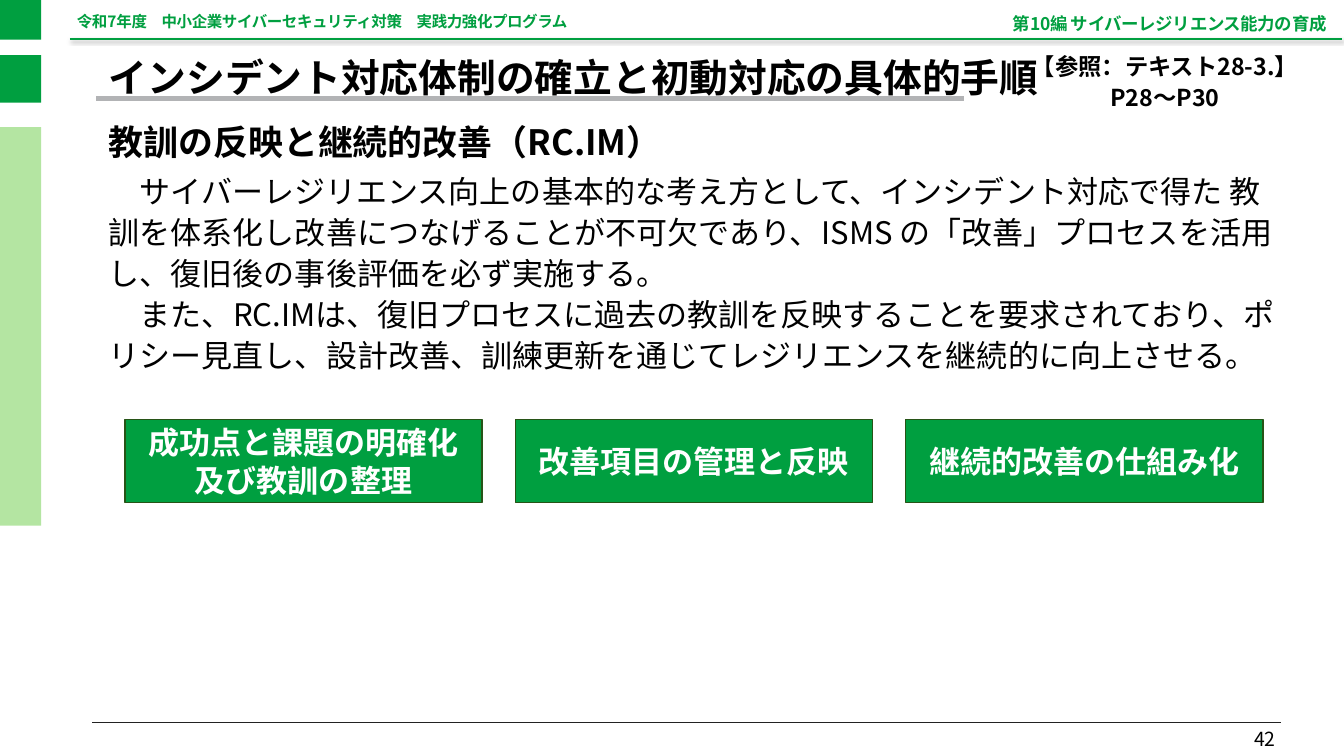
from lxml import etree
from pptx import Presentation
from pptx.dml.color import RGBColor
from pptx.enum.shapes import MSO_CONNECTOR, MSO_SHAPE
from pptx.enum.text import MSO_ANCHOR, MSO_AUTO_SIZE, PP_ALIGN
from pptx.oxml.ns import qn
from pptx.util import Inches, Pt

LEFT, CENTER, RIGHT = PP_ALIGN.LEFT, PP_ALIGN.CENTER, PP_ALIGN.RIGHT
TOP, MIDDLE, BOTTOM = MSO_ANCHOR.TOP, MSO_ANCHOR.MIDDLE, MSO_ANCHOR.BOTTOM
NO_FIT = MSO_AUTO_SIZE.NONE
STRAIGHT = MSO_CONNECTOR.STRAIGHT
RECTANGLE = MSO_SHAPE.RECTANGLE
FONT = "Noto Sans CJK JP"
COLORS = {
    "green": "009F40", "light green": "B4E5A2", "dark green": "275417",
    "gray": "B2B3B5", "rule": "222222", "black": "000000", "white": "FFFFFF",
}


def rgb(name):
    return RGBColor.from_string(COLORS[name])


def write(shape, text, size, color="black", bold=False, align=LEFT,
          anchor=TOP, spacing=1.0, before=0, tracking=None):
    frame = shape.text_frame
    frame.text = text
    frame.word_wrap = True
    frame.auto_size = NO_FIT
    frame.vertical_anchor = anchor
    for paragraph in frame.paragraphs:
        paragraph.alignment = align
        paragraph.line_spacing = spacing
        paragraph.space_before = Pt(before)
        for run in paragraph.runs:
            run.font.size = Pt(size)
            run.font.bold = bold
            run.font.name = FONT
            run.font.color.rgb = rgb(color)
            properties = run.font._element
            etree.SubElement(properties, qn("a:ea"), typeface=FONT)
            if tracking is not None:
                properties.set("spc", str(tracking))


prs = Presentation()
prs.slide_width = Inches(19.26)
prs.slide_height = Inches(10.83)
slide = prs.slides.add_slide(prs.slide_layouts[1])
shapes = slide.shapes

rules = [
    (1, 19.23, 0.56, "green", 2, True),
    (1.32, 18.36, 10.35, "rule", 1, False),
    (1.38, 13.81, 1.41, "gray", 6, False),
]
for start, end, y, color, weight, shaded in rules:
    rule = shapes.add_connector(STRAIGHT, Inches(start), Inches(y), Inches(end), Inches(y))
    rule.line.color.rgb = rgb(color)
    rule.line.width = Pt(weight)
    effects = etree.SubElement(rule._element.spPr, qn("a:effectLst"))
    if shaded:
        shadow = etree.SubElement(effects, qn("a:outerShdw"), blurRad=str(Pt(4)),
                                  dist=str(Pt(3)), dir="2700000", algn="tl", rotWithShape="0")
        tint = etree.SubElement(shadow, qn("a:srgbClr"), val=COLORS["black"])
        etree.SubElement(tint, qn("a:alpha"), val="40000")

for top, height, color in [(0, 0.57, "green"), (0.79, 0.68, "green"), (1.82, 5.71, "light green")]:
    side_bar = shapes.add_shape(RECTANGLE, 0, Inches(top), Inches(0.59), Inches(height))
    side_bar.shadow.inherit = False
    side_bar.fill.solid()
    side_bar.fill.fore_color.rgb = rgb(color)
    side_bar.line.fill.background()

headers = [
    (1.1, 0.22, 17.48, 0.22, "令和7年度　中小企業サイバーセキュリティ対策　実践力強化プログラム",
     16, LEFT, TOP, Pt(15)),
    (8.62, 0.2, 10.39, 0.29, "第10編 サイバーレジリエンス能力の育成", 18, RIGHT, MIDDLE, 0.9),
]
for left, top, width, height, text, size, align, anchor, spacing in headers:
    header = shapes.add_textbox(Inches(left), Inches(top), Inches(width), Inches(height))
    write(header, text, size, "green", True, align, anchor, spacing, tracking=-40)
    frame = header.text_frame
    frame.margin_left = frame.margin_right = frame.margin_bottom = 0
    frame.margin_top = Inches(0.01)

title = shapes.title
title.left, title.top, title.width, title.height = (Inches(v) for v in (1.46, 0.76, 17.61, 0.61))
write(title, "インシデント対応体制の確立と初動対応の具体的手順", 40, bold=True,
      anchor=MIDDLE, spacing=1.1, before=10)

subtitle = shapes.add_textbox(Inches(1.46), Inches(1.76), Inches(16.34), Inches(0.61))
write(subtitle, "教訓の反映と継続的改善（RC.IM）", 36, bold=True, anchor=MIDDLE, spacing=0.9, before=10)

body = slide.placeholders[1]
body.left, body.top, body.width, body.height = (Inches(v) for v in (1.46, 2.37, 17.11, 3.57))
write(body, "　サイバーレジリエンス向上の基本的な考え方として、インシデント対応で得た 教訓を体系化し"
            "改善につなげることが不可欠であり、ISMS の「改善」プロセスを活用し、復旧後の事後評価を"
            "必ず実施する。\n"
            "　また、RC.IMは、復旧プロセスに過去の教訓を反映することを要求されており、ポリシー見直し、"
            "設計改善、訓練更新を通じてレジリエンスを継続的に向上させる。", 32, spacing=1.1)
for paragraph in body.text_frame.paragraphs:
    layout = paragraph._p.get_or_add_pPr()
    layout.set("marL", "0")
    layout.set("indent", "0")
    etree.SubElement(layout, qn("a:buNone"))

steps = ["成功点と課題の明確化\n及び教訓の整理", "改善項目の管理と反映", "継続的改善の仕組み化"]
for index, text in enumerate(steps):
    step = shapes.add_shape(RECTANGLE, Inches(1.79 + 5.595 * index), Inches(6.01),
                            Inches(5.12), Inches(1.19))
    step.shadow.inherit = False
    step.fill.solid()
    step.fill.fore_color.rgb = rgb("green")
    step.line.color.rgb = rgb("dark green")
    step.line.width = Pt(1.5)
    write(step, text, 32, "white", True, CENTER, MIDDLE)

reference = shapes.add_textbox(Inches(14.33), Inches(0.66), Inches(4.73), Inches(0.93))
write(reference, "【参照：テキスト28-3.】\nP28～P30", 24, bold=True, align=CENTER, spacing=1.1)

page_number = shapes.add_textbox(Inches(14.05), Inches(10.22), Inches(4.33), Inches(0.58))
write(page_number, "42", 20, align=RIGHT, anchor=BOTTOM)

prs.save("out.pptx")
